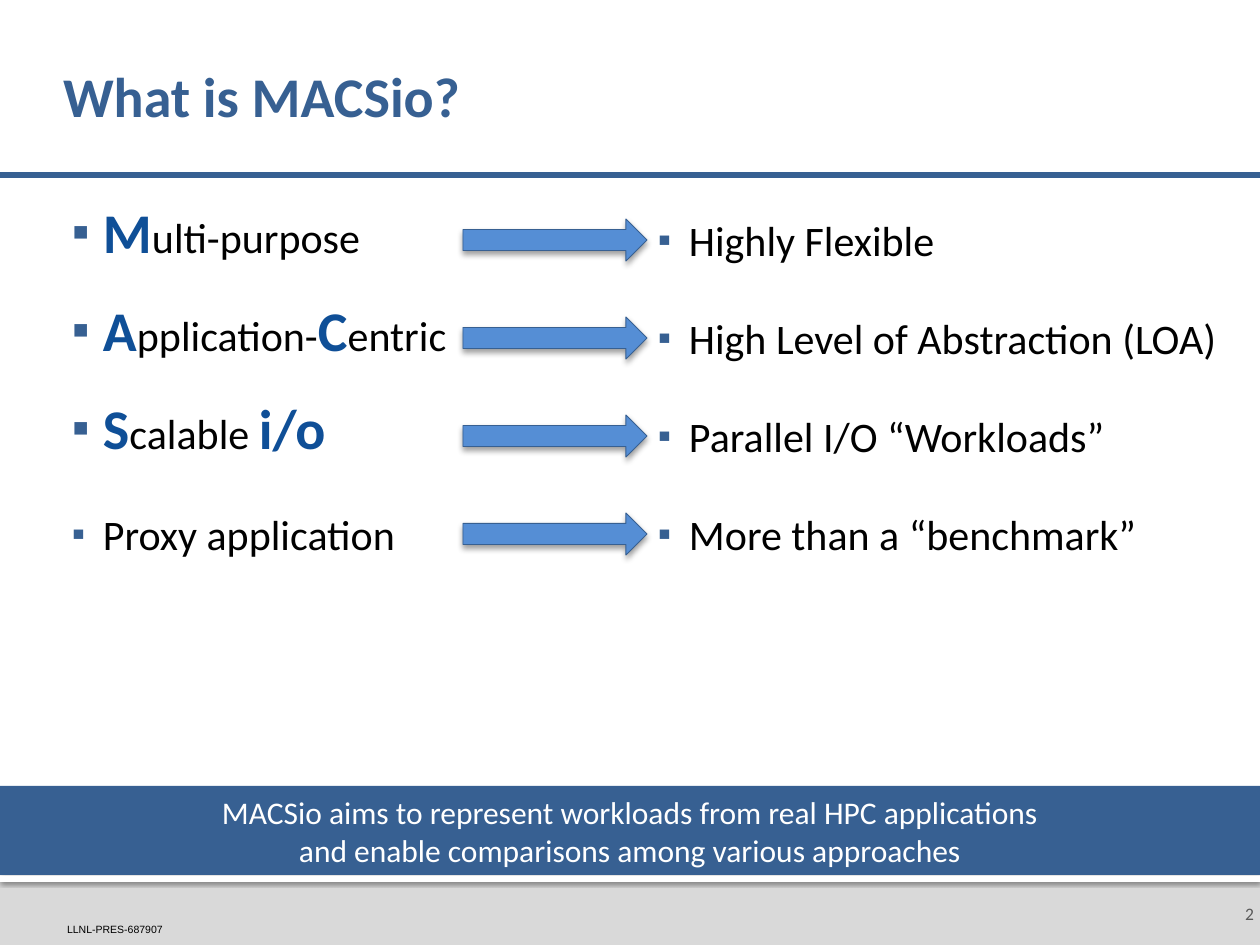
"""Build the slide that explains what MACSio is."""
from lxml.etree import SubElement
from pptx import Presentation
from pptx.dml.color import RGBColor as RGB
from pptx.enum.shapes import MSO_CONNECTOR as LINK, MSO_SHAPE as SHAPE
from pptx.enum.text import MSO_ANCHOR as ANCHOR, MSO_AUTO_SIZE as FIT, PP_ALIGN as ALIGN
from pptx.oxml.ns import qn
from pptx.util import Emu, Pt

NAVY = RGB(0x37, 0x60, 0x92)
DEEP = RGB(0x0F, 0x4F, 0x97)
BLUE = RGB(0x55, 0x8E, 0xD5)
GREY = RGB(0xD9, 0xD9, 0xD9)
DARK = RGB(0x59, 0x59, 0x59)
BLACK = RGB(0, 0, 0)
WHITE = RGB(255, 255, 255)

TITLE = "What is MACSio?"
ROWS = [
    (("*M", "ulti-purpose"), ("Highly Flexible",)),
    (("*A", "pplication-", "*C", "entric"), ("High Level of Abstraction (LOA)",)),
    (("*S", "calable ", "*i/o"), ("Parallel I/O “Workloads”",)),
    (("Proxy application",), ("More than a “benchmark”",)),
]
BANNER = ("MACSio aims to represent workloads from real HPC applications\v"
          "and enable comparisons among various approaches")
CODE = "LLNL-PRES-687907"
PAGE = "2"

WIDE, HIGH = 1260, 945
LEFT, RIGHT = (64, 198, 547, 673), (650, 198, 581, 673)
ARROW, PITCH = (463, 219, 184, 42), 98


def px(num):
    return Emu(round(num * 914400 / 126))


def place(item, box):
    item.left, item.top, item.width, item.height = map(px, box)


def inset(frame, *sides):
    (frame.margin_left, frame.margin_top,
     frame.margin_right, frame.margin_bottom) = map(px, sides)


def style(font, size, color, name="Calibri", bold=False):
    font.size, font.name, font.bold = Pt(size), name, bold
    font.color.rgb = color


def write(frame, text, size, color, anchor, align=ALIGN.LEFT, name="Calibri", bold=False):
    frame.word_wrap, frame.vertical_anchor = True, anchor
    para = frame.paragraphs[0]
    para.text, para.alignment = text, align
    style(para.font, size, color, name, bold)
    return para


def shade(shape, alpha, blur, dist):
    group = SubElement(shape._element.spPr, qn("a:effectLst"))
    drop = SubElement(group, qn("a:outerShdw"), blurRad=str(Pt(blur)),
                      dist=str(Pt(dist)), dir="5400000", rotWithShape="0")
    tint = SubElement(drop, qn("a:srgbClr"), val="000000")
    SubElement(tint, qn("a:alpha"), val=str(alpha * 1000))


def block(slide, kind, box, fill, edge=None, drop=None):
    shape = slide.shapes.add_shape(kind, *map(px, box))
    shape.fill.solid()
    shape.fill.fore_color.rgb = fill
    if edge:
        shape.line.color.rgb, shape.line.width = edge, Pt(0.5)
    else:
        shape.line.fill.background()
    if drop:
        shade(shape, *drop)
    else:
        shape.shadow.inherit = False
    return shape


def bullet(para):
    props = para._p.get_or_add_pPr()
    props.set("marL", str(px(39)))
    props.set("indent", str(-px(31)))
    tint = SubElement(props, qn("a:buClr"))
    SubElement(tint, qn("a:srgbClr"), val=str(NAVY))
    SubElement(props, qn("a:buSzPct"), val="90000")
    SubElement(props, qn("a:buFont"), typeface="Arial")
    SubElement(props, qn("a:buChar"), char="▪")


def fill_list(body, box, items):
    place(body, box)
    frame = body.text_frame
    frame.word_wrap, frame.auto_size = True, FIT.NONE
    frame.vertical_anchor = ANCHOR.TOP
    inset(frame, 0, 0, 0, 0)
    for num, parts in enumerate(items):
        para = frame.add_paragraph() if num else frame.paragraphs[0]
        bullet(para)
        para.line_spacing, para.space_after = Pt(38), Pt(6)
        para.space_before = Pt(12 if num else 0)
        style(para.font, 24, BLACK)
        for part in parts:
            run = para.add_run()
            run.text = part.lstrip("*")
            if part.startswith("*"):
                style(run.font, 32, DEEP, bold=True)


def label(slide, box, sides, *args, **kwargs):
    frame = slide.shapes.add_textbox(*map(px, box)).text_frame
    inset(frame, *sides)
    write(frame, *args, **kwargs)


def frame_page(slide):
    block(slide, SHAPE.RECTANGLE, (0, 876, WIDE, 69), GREY)
    block(slide, SHAPE.RECTANGLE, (0, 876, WIDE, 6), WHITE, drop=(60, 2.5, 0.8))
    label(slide, (67, 923, 121, 13), (0, 0, 0, 0), CODE, 6, BLACK, ANCHOR.BOTTOM, name="Arial")
    label(slide, (1216, 882, 44, 63), (13, 6, 6, 6), PAGE, 10, DARK, ANCHOR.MIDDLE, ALIGN.RIGHT)
    rule = slide.shapes.add_connector(LINK.STRAIGHT, *map(px, (-1, 175, WIDE, 175)))
    rule.line.color.rgb, rule.line.width = NAVY, Pt(3)
    SubElement(rule._element.spPr, qn("a:effectLst"))


def main():
    deck = Presentation()
    deck.slide_width, deck.slide_height = px(WIDE), px(HIGH)
    slide = deck.slides.add_slide(deck.slide_layouts[3])
    frame_page(slide)

    title = slide.shapes.title
    place(title, (63, 30, 1134, 139))
    inset(title.text_frame, 0, 6, 6, 6)
    title.text_frame.auto_size = FIT.NONE
    head = write(title.text_frame, TITLE, 32, NAVY, ANCHOR.MIDDLE, bold=True)
    head.line_spacing = 0.9

    for spot, box, items in zip((1, 2), (LEFT, RIGHT), zip(*ROWS)):
        fill_list(slide.placeholders[spot], box, items)

    banner = block(slide, SHAPE.RECTANGLE, (0, 786, WIDE, 89), NAVY)
    write(banner.text_frame, BANNER, 18, WHITE, ANCHOR.BOTTOM, ALIGN.CENTER)
    banner.text_frame.auto_size = FIT.SHAPE_TO_FIT_TEXT

    left, top, width, height = ARROW
    for row in range(len(ROWS)):
        box = (left, top + row * PITCH, width, height)
        block(slide, SHAPE.RIGHT_ARROW, box, BLUE, NAVY, (38, 3.5, 2))

    deck.save("out.pptx")


if __name__ == "__main__":
    main()
